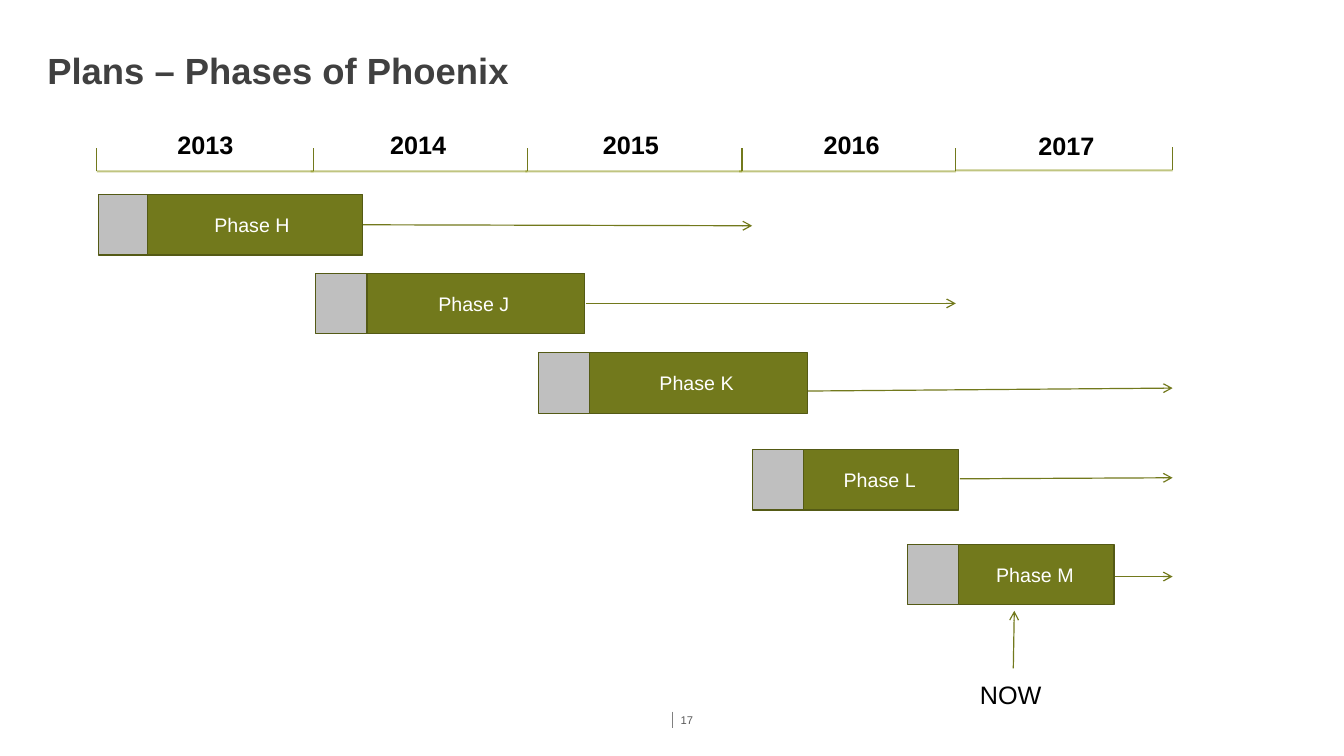
from lxml.etree import SubElement
from pptx import Presentation
from pptx.dml.color import RGBColor
from pptx.enum.shapes import MSO_CONNECTOR as Connector, MSO_SHAPE as Shape
from pptx.enum.text import MSO_ANCHOR as Anchor, MSO_AUTO_SIZE as AutoSize, PP_ALIGN as Align
from pptx.oxml.ns import qn
from pptx.util import Emu, Pt

OLIVE, DARK_OLIVE, AXIS, GREY = "72791C", "545A15", "838D05", "BFBFBF"
EMU_PER_PX = 9144


def px(*lengths):
    return [Emu(length * EMU_PER_PX) for length in lengths]


def color(value):
    return RGBColor.from_string(value)


class Sketch:
    font_name = "Arial"
    line_width = 0.85

    def __init__(self, slide):
        self.slide = slide

    def set_text(self, shape, text, size, ink, bold=False, align=Align.LEFT,
                 anchor=Anchor.TOP, insets=(10, 5, 10, 5)):
        frame = shape.text_frame
        frame.text = text
        frame.word_wrap = True
        frame.auto_size = AutoSize.NONE
        frame.vertical_anchor = anchor
        (frame.margin_left, frame.margin_top,
         frame.margin_right, frame.margin_bottom) = px(*insets)
        paragraph = frame.paragraphs[0]
        paragraph.alignment = align
        font = paragraph.font
        font.name, font.size, font.bold = self.font_name, Pt(size), bold
        font.color.rgb = color(ink)

    def title(self, text, box):
        shape = self.slide.shapes.title
        shape.left, shape.top, shape.width, shape.height = px(*box)
        self.set_text(shape, text, 26, "404040", True, anchor=Anchor.BOTTOM, insets=(0, 0, 0, 8))

    def text(self, text, box, size=18, ink="000000", **style):
        self.set_text(self.slide.shapes.add_textbox(*px(*box)), text, size, ink, **style)

    def bar(self, box, fill, text=""):
        shape = self.slide.shapes.add_shape(Shape.RECTANGLE, *px(*box))
        shape.shadow.inherit = False
        shape.fill.solid()
        shape.fill.fore_color.rgb = color(fill)
        shape.line.color.rgb = color(DARK_OLIVE)
        shape.line.width = Pt(self.line_width)
        if text:
            self.set_text(shape, text, 14, "FFFFFF", align=Align.CENTER, anchor=Anchor.MIDDLE)

    def line(self, start, end, ink=OLIVE, width=line_width, opacity=None, arrow=False):
        connector = self.slide.shapes.add_connector(Connector.STRAIGHT, *px(*start, *end))
        connector.line.color.rgb = color(ink)
        connector.line.width = Pt(width)
        properties = connector._element.spPr
        outline = properties.find(qn("a:ln"))
        if opacity:
            ink_element = outline.find(".//" + qn("a:srgbClr"))
            SubElement(ink_element, qn("a:alpha"), val=str(opacity * 1000))
        if arrow:
            SubElement(outline, qn("a:tailEnd"), type="arrow")
        SubElement(properties, qn("a:effectLst"))


def main():
    presentation = Presentation()
    presentation.slide_width, presentation.slide_height = px(1333, 750)
    sketch = Sketch(presentation.slides.add_slide(presentation.slide_layouts[5]))

    sketch.title("Plans – Phases of Phoenix", (47, 5, 1239, 94))
    sketch.line((667, 706), (667, 722), "808080", 0.75)
    sketch.text("17", (667, 706, 42, 16), 8, "595959", anchor=Anchor.MIDDLE, insets=(8, 0, 0, 0))

    tick_height = 23
    years = [(2013, 96, 311, 170, 166, 123), (2014, 308, 523, 170, 377, 123),
             (2015, 521, 736, 170, 588, 123), (2016, 733, 948, 170, 807, 123),
             (2017, 948, 1163, 169, 1020, 124)]
    sketch.line((96, 170), (96, 170 - tick_height))
    for year, left, right, axis, label_left, label_top in years:
        sketch.line((left, axis), (right, axis), AXIS, 1.35, opacity=50)
        sketch.line((right, axis), (right, axis - tick_height))
        sketch.text(str(year), (label_left, label_top, 92, 40), bold=True)

    bar_height = 60
    phases = [("H", 98, 48, 140, 220, 193, (360, 223), (746, 224)),
              ("J", 313, 51, 360, 220, 271, (581, 301), (948, 301)),
              ("K", 534, 51, 581, 220, 350, (793, 388), (1163, 385)),
              ("L", 746, 51, 794, 157, 446, (952, 475), (1163, 474)),
              ("M", 900, 51, 948, 157, 540, (1105, 572), (1163, 572))]
    for letter, lead_left, lead_width, left, width, top, start, end in phases:
        sketch.line(start, end, arrow=True)
        sketch.bar((left, top, width, bar_height), OLIVE, f"Phase {letter}")
        sketch.bar((lead_left, top, lead_width, bar_height), GREY)

    sketch.line((1005, 663), (1006, 606), arrow=True)
    sketch.text("NOW", (962, 669, 87, 40))
    presentation.save("out.pptx")


if __name__ == "__main__":
    main()
